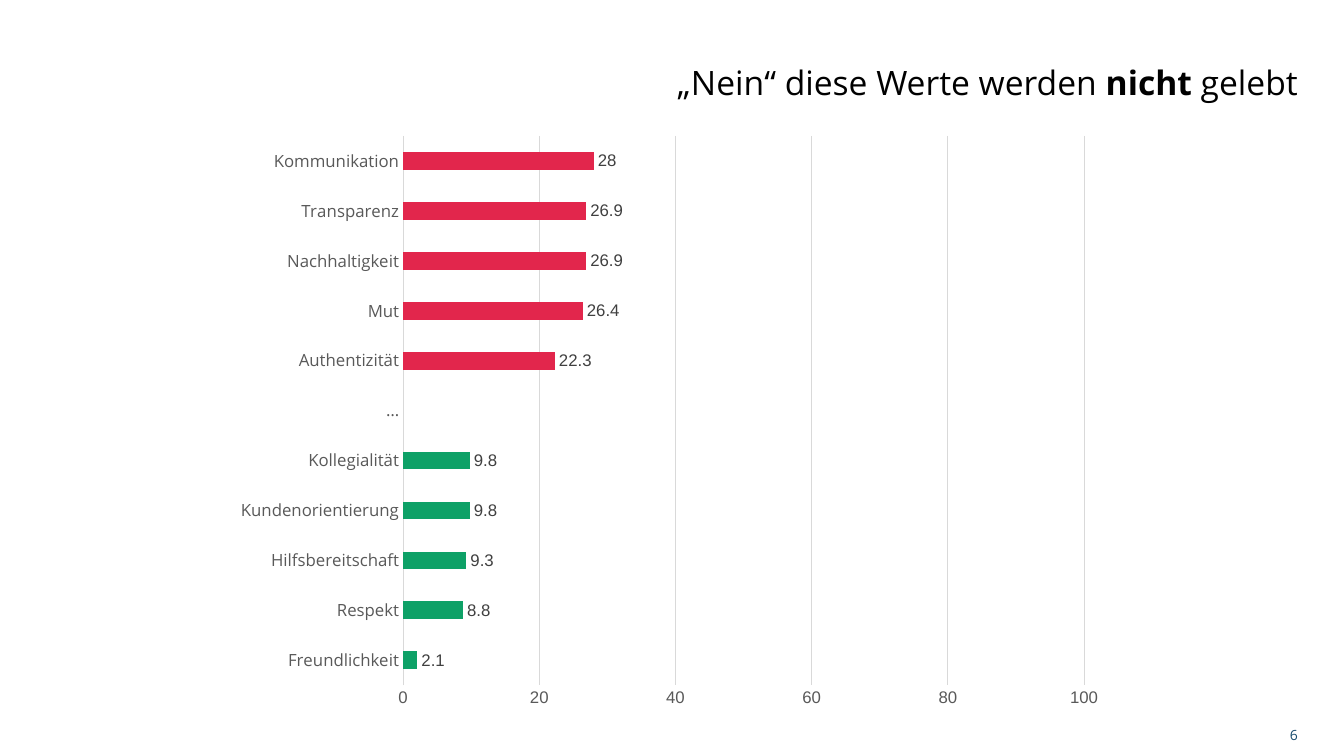
from dataclasses import dataclass

from lxml.etree import SubElement
from pptx import Presentation
from pptx.chart.data import CategoryChartData
from pptx.dml.color import RGBColor
from pptx.enum.chart import XL_CHART_TYPE, XL_LABEL_POSITION, XL_TICK_MARK
from pptx.enum.text import MSO_ANCHOR, PP_ALIGN
from pptx.oxml import parse_xml
from pptx.oxml.ns import nsdecls, qn
from pptx.util import Inches, Pt

WIDTH, HEIGHT = Inches(13.33), Inches(7.5)
SANS, ARIAL = "Open Sans", "Arial"
GREEN, RED, GRID, AXIS_TEXT = "0EA167", "E2264C", "D9D9D9", "595959"


@dataclass
class Area:
    """A rectangle in shares of the slide's size."""
    x: float
    y: float
    w: float
    h: float

    def emu(self) -> tuple[int, int, int, int]:
        return (int(self.x * WIDTH), int(self.y * HEIGHT),
                int(self.w * WIDTH), int(self.h * HEIGHT))


@dataclass
class Run:
    text: str
    bold: bool = False


@dataclass
class Bar:
    name: str
    value: float | None
    color: str | None


# Listed from the bottom of the chart to the top
BARS = [
    Bar("Freundlichkeit", 2.1, GREEN),
    Bar("Respekt", 8.8, GREEN),
    Bar("Hilfsbereitschaft", 9.3, GREEN),
    Bar("Kundenorientierung", 9.8, GREEN),
    Bar("Kollegialität", 9.8, GREEN),
    Bar("…", None, None),
    Bar("Authentizität", 22.3, RED),
    Bar("Mut", 26.4, RED),
    Bar("Nachhaltigkeit", 26.9, RED),
    Bar("Transparenz", 26.9, RED),
    Bar("Kommunikation", 28, RED),
]


def rgb(color: str) -> RGBColor:
    return RGBColor.from_string(color)


def set_font(font, size: float, color: str, name: str) -> None:
    font.size, font.name = Pt(size), name
    font.color.rgb = rgb(color)


def add_text(s, area: Area, runs: list[Run], size: float, color: str) -> None:
    """Add a right-aligned line of text, centred vertically."""
    tf = s.shapes.add_textbox(*area.emu()).text_frame
    tf.word_wrap = True
    tf.vertical_anchor = MSO_ANCHOR.MIDDLE
    p = tf.paragraphs[0]
    p.alignment = PP_ALIGN.RIGHT
    set_font(p.font, size, color, SANS)
    for run in runs:
        r = p.add_run()
        r.text = run.text
        if run.bold:
            r.font.bold = True


def set_plot_area(chart, area: Area) -> None:
    """Fix the inner plot area, in shares of the chart's size."""
    plot_area = chart.plots[0]._element.getparent()
    for old in plot_area.findall(qn("c:layout")):
        plot_area.remove(old)
    layout = parse_xml(f"<c:layout {nsdecls('c')}><c:manualLayout/></c:layout>")
    settings = {"layoutTarget": "inner", "xMode": "edge", "yMode": "edge",
                "x": area.x, "y": area.y, "w": area.w, "h": area.h}
    for tag, value in settings.items():
        SubElement(layout[0], qn(f"c:{tag}")).set("val", str(value))
    plot_area.insert(0, layout)


def style_axes(chart) -> None:
    cat, val = chart.category_axis, chart.value_axis
    for axis, font_name in ((cat, SANS), (val, ARIAL)):
        axis.major_tick_mark = axis.minor_tick_mark = XL_TICK_MARK.NONE
        set_font(axis.tick_labels.font, 12, AXIS_TEXT, font_name)
    val.minimum_scale, val.maximum_scale, val.major_unit = 0, 100, 20
    val.has_major_gridlines = True
    val.format.line.fill.background()
    for line in (cat.format.line, val.major_gridlines.format.line):
        line.color.rgb = rgb(GRID)
        line.width = Pt(0.75)


def add_bar_chart(s, area: Area, bars: list[Bar]) -> None:
    data = CategoryChartData()
    data.categories = [bar.name for bar in bars]
    data.add_series("Series 1", [bar.value for bar in bars])
    chart = s.shapes.add_chart(XL_CHART_TYPE.BAR_CLUSTERED, *area.emu(), data).chart
    chart.has_legend = chart.has_title = False
    set_font(chart.font, 10, "000000", ARIAL)
    set_plot_area(chart, Area(0.2, 0.02, 0.76, 0.92))
    style_axes(chart)

    plot = chart.plots[0]
    plot.gap_width = 182
    plot.vary_by_categories = False
    series = plot.series[0]
    series.format.fill.solid()
    series.format.fill.fore_color.rgb = rgb("223B7A")
    for i, bar in enumerate(bars):
        if bar.color:
            fill = series.points[i].format.fill
            fill.solid()
            fill.fore_color.rgb = rgb(bar.color)
    labels = series.data_labels
    labels.show_value = True
    labels.position = XL_LABEL_POSITION.OUTSIDE_END
    set_font(labels.font, 12, "404040", ARIAL)


def main() -> None:
    prs = Presentation()
    prs.slide_width, prs.slide_height = WIDTH, HEIGHT
    s = prs.slides.add_slide(prs.slide_layouts[6])
    add_text(s, Area(0.75, 0.94, 0.223, 0.064), [Run("6")], 10, "194D6F")
    title = [Run("„Nein“ diese Werte werden "), Run("nicht ", bold=True), Run("gelebt")]
    add_text(s, Area(0.217, 0.077, 0.756, 0.064), title, 24, "000000")
    add_bar_chart(s, Area(1 / 6, 0.164, 2 / 3, 0.79), BARS)
    prs.save("out.pptx")


if __name__ == "__main__":
    main()
